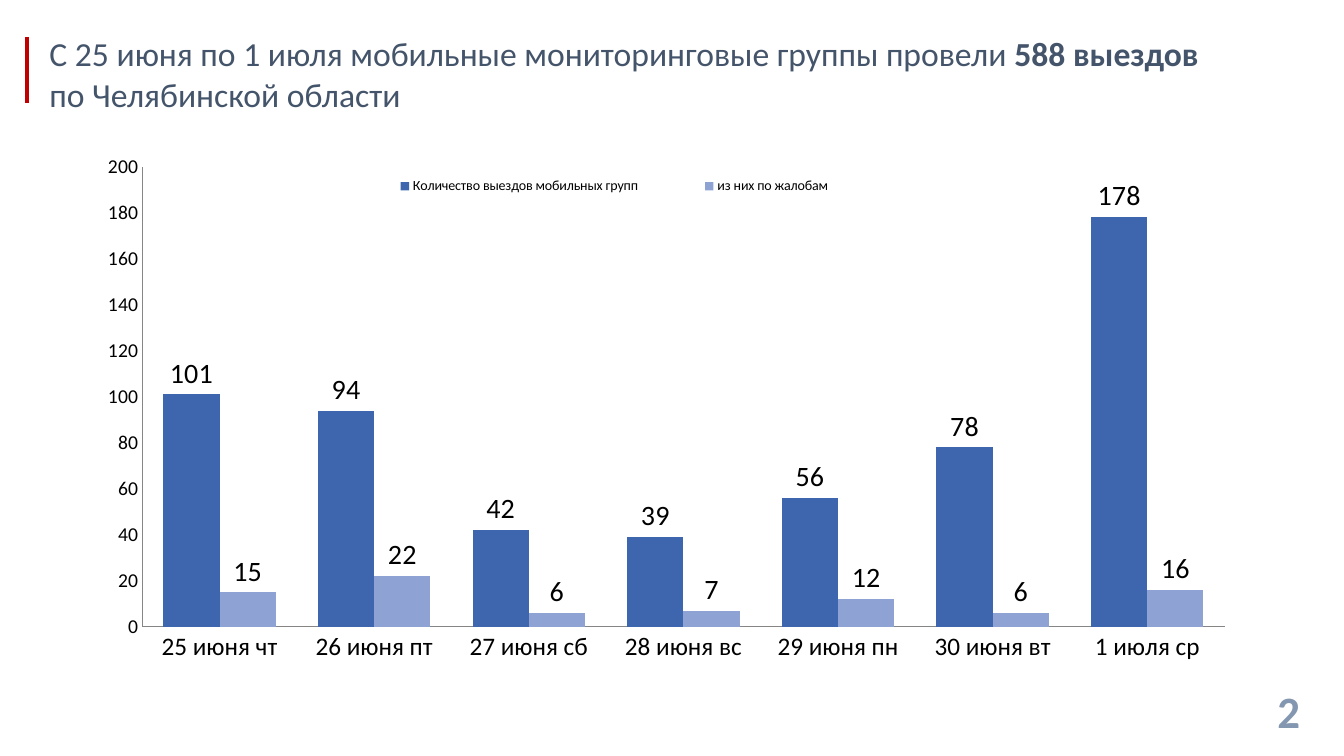
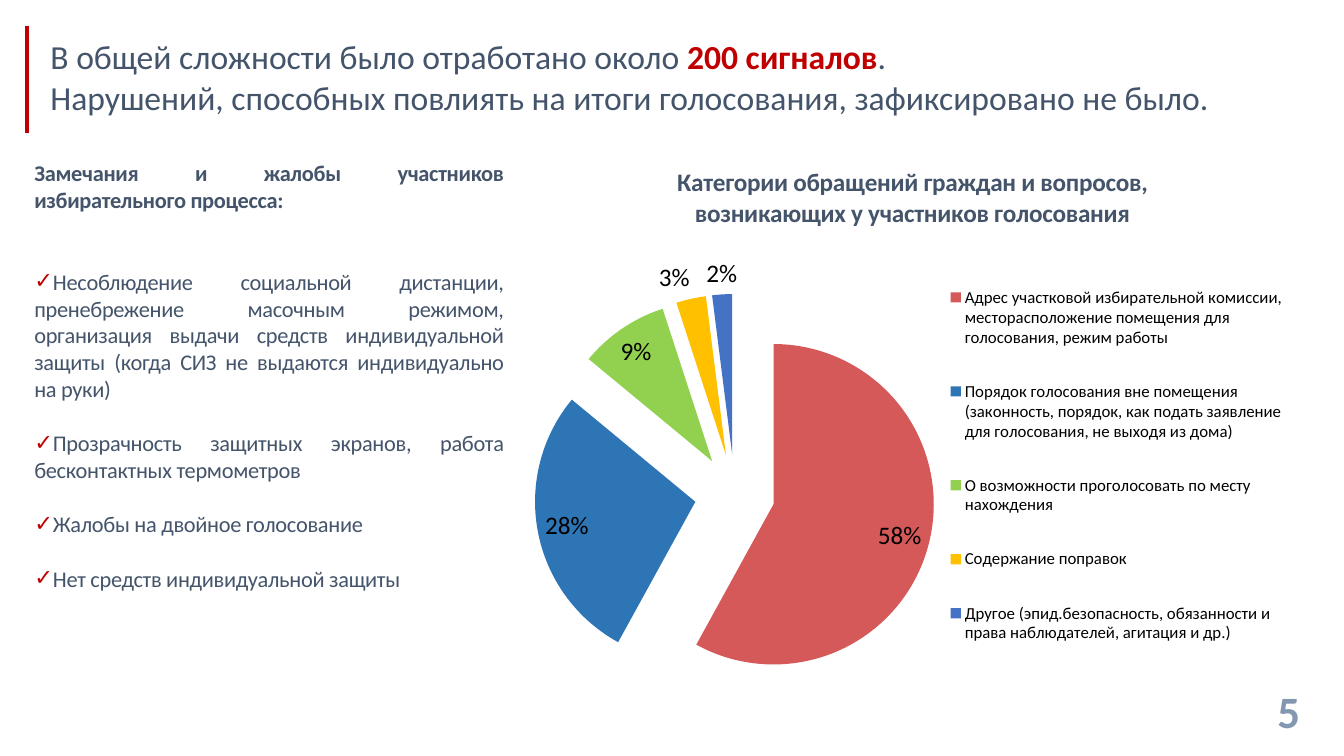
from dataclasses import dataclass

from pptx import Presentation
from pptx.chart.data import CategoryChartData
from pptx.dml.color import RGBColor
from pptx.enum import chart as ch, shapes, text
from pptx.oxml import parse_xml
from pptx.oxml.ns import nsdecls, qn
from pptx.util import Inches, Pt

FONT = "Calibri"
COLORS = {
    "slate": "44546A", "red": "C00000", "number": "8497B0", "black": "000000",
    "axis": "868686", "trips": "3D66AE", "complaints": "8FA2D4",
}
PIE_COLORS = ["D65959", "2E75B6", "92D050", "FFC000", "4472C4"]
TITLE_FORMAT = {"size": Pt(24), "bold": False, "color": "slate"}
NUMBER_FORMAT = {"size": Pt(32), "bold": True, "color": "number"}
BODY_FORMAT = {"size": Pt(16), "bold": False, "color": "slate"}


@dataclass
class Run:
    text: str
    bold: bool = False
    color: str = "slate"


@dataclass
class Box:
    left: float
    top: float
    width: float
    height: float

    def lengths(self) -> list:
        return [Inches(v) for v in (self.left, self.top, self.width, self.height)]


@dataclass
class Header:
    lines: list[list[Run]]
    box: Box
    bar_top: float
    bar_bottom: float
    number: str


def rgb(name: str) -> RGBColor:
    return RGBColor.from_string(COLORS.get(name, name))


def set_font(font, **values) -> None:
    for name, value in {"name": FONT, **values}.items():
        if name == "color":
            font.color.rgb = rgb(value)
        else:
            setattr(font, name, value)


def add_run(p, content: str, spacing: int = 0, **values) -> None:
    """Add a run; spacing is in hundredths of a point."""
    r = p.add_run()
    r.text = content
    set_font(r.font, **values)
    if spacing:
        r.font._element.set("spc", str(spacing))


def place(sp, box: Box, anchor) -> None:
    sp.left, sp.top, sp.width, sp.height = box.lengths()
    tf = sp.text_frame
    tf.word_wrap = True
    tf.auto_size = text.MSO_AUTO_SIZE.NONE
    tf.vertical_anchor = anchor


def format_paragraph(p, **values) -> None:
    defaults = {"alignment": text.PP_ALIGN.LEFT, "line_spacing": 1.0,
                "space_before": Pt(0), "space_after": Pt(0)}
    for name, value in {**defaults, **values}.items():
        setattr(p, name, value)


def paragraphs(tf, items: list):
    for i, item in enumerate(items):
        yield (tf.add_paragraph() if i else tf.paragraphs[0]), item


def add_header(slide, header: Header) -> None:
    """Add the red bar, the title and the page number."""
    bar = slide.shapes.add_connector(
        shapes.MSO_CONNECTOR.STRAIGHT, Inches(0.27), Inches(header.bar_top),
        Inches(0.27), Inches(header.bar_bottom))
    bar.line.color.rgb = rgb("red")
    bar.line.width = Pt(3)
    bar._element.spPr.append(parse_xml(f"<a:effectLst {nsdecls('a')}/>"))

    title = slide.shapes.title
    place(title, header.box, text.MSO_ANCHOR.TOP)
    for p, runs in paragraphs(title.text_frame, header.lines):
        format_paragraph(p)
        for run in runs:
            add_run(p, run.text, **{**TITLE_FORMAT, "bold": run.bold, "color": run.color})

    box = Box(12.67, 6.76, 0.49, 0.56)
    number = slide.shapes.add_textbox(*box.lengths())
    place(number, box, text.MSO_ANCHOR.TOP)
    tf = number.text_frame
    tf.margin_left = tf.margin_right = tf.margin_bottom = 0
    tf.margin_top = Inches(0.02)
    add_run(tf.paragraphs[0], header.number, 10, **NUMBER_FORMAT)


def add_remarks(body, heading: str, remarks: list[str]) -> None:
    place(body, Box(0.24, 1.52, 4.86, 4.41), text.MSO_ANCHOR.MIDDLE)
    line = 19.5
    for i, (p, content) in enumerate(paragraphs(body.text_frame, [heading, *remarks])):
        pPr = p._p.get_or_add_pPr()
        pPr.set("marL", "0")
        pPr.set("indent", "0")
        gap = {0: 0, 1: 2 * line}.get(i, line)
        format_paragraph(p, alignment=text.PP_ALIGN.JUSTIFY, space_before=Pt(gap))
        if i:
            bullet = (f'<a:buClr {nsdecls("a")}><a:srgbClr val="{COLORS["red"]}"/></a:buClr>',
                      f'<a:buFont {nsdecls("a")} typeface="{FONT}"/>',
                      f'<a:buChar {nsdecls("a")} char="✓"/>')
        else:
            bullet = (f"<a:buNone {nsdecls('a')}/>",)
        for xml in bullet:
            pPr.append(parse_xml(xml))
        add_run(p, content, -20, **{**BODY_FORMAT, "bold": i == 0})


def set_layout(parent, index: int, box: Box, inner: bool = False) -> None:
    """Fix a chart part at fractions of the chart area."""
    for old in parent.findall(qn("c:layout")):
        parent.remove(old)
    target = '<c:layoutTarget val="inner"/>' if inner else ""
    modes = "".join(f'<c:{k}Mode val="edge"/>' for k in "xy")
    values = zip("xywh", (box.left, box.top, box.width, box.height))
    sizes = "".join(f'<c:{k} val="{v}"/>' for k, v in values)
    parent.insert(index, parse_xml(
        f"<c:layout {nsdecls('c')}><c:manualLayout>{target}{modes}{sizes}"
        "</c:manualLayout></c:layout>"))


def add_chart(slide, kind, box: Box, categories: list[str], series: dict,
              plot_box: Box, legend_box: Box, legend_position, legend_size: int):
    data = CategoryChartData()
    data.categories = categories
    for name, values in series.items():
        data.add_series(name, values)
    chart = slide.shapes.add_chart(kind, *box.lengths(), data).chart
    set_font(chart.font, size=Pt(10), color="black")
    chart.has_title = False
    chart.has_legend = True
    chart.legend.position = legend_position
    chart.legend.include_in_layout = False
    set_font(chart.legend.font, size=Pt(legend_size), color="black")
    set_layout(chart.legend._element, 1, legend_box)
    set_layout(chart._chartSpace.find(".//" + qn("c:plotArea")), 0, plot_box, True)
    chart.plots[0].has_data_labels = True
    return chart


def add_trips_chart(slide) -> None:
    days = ["25 июня чт", "26 июня пт", "27 июня сб", "28 июня вс",
            "29 июня пн", "30 июня вт", "1 июля ср"]
    series = {
        "Количество выездов мобильных групп": [101, 94, 42, 39, 56, 78, 178],
        "из них по жалобам": [15, 22, 6, 7, 12, 6, 16],
    }
    chart = add_chart(
        slide, ch.XL_CHART_TYPE.COLUMN_CLUSTERED, Box(0.84, 1.43, 11.42, 5.57),
        days, series, Box(0.05, 0.04, 0.94, 0.82), Box(0.22, 0.05, 0.48, 0.05),
        ch.XL_LEGEND_POSITION.BOTTOM, 10)
    plot = chart.plots[0]
    plot.vary_by_categories = False
    plot.gap_width, plot.overlap = 75, 0
    for s, color in zip(plot.series, ("trips", "complaints")):
        s.format.fill.solid()
        s.format.fill.fore_color.rgb = rgb(color)
    labels = plot.data_labels
    labels.show_value = True
    labels.position = ch.XL_LABEL_POSITION.OUTSIDE_END
    set_font(labels.font, size=Pt(20), color="black")
    for axis, size in ((chart.category_axis, 18), (chart.value_axis, 14)):
        axis.has_major_gridlines = False
        axis.major_tick_mark = ch.XL_TICK_MARK.NONE
        axis.format.line.color.rgb = rgb("axis")
        set_font(axis.tick_labels.font, size=Pt(size), color="black")
    axis = chart.value_axis
    axis.minimum_scale, axis.maximum_scale, axis.major_unit = 0, 200, 20


def add_questions_chart(slide) -> None:
    name = "Категории обращений граждан и вопросов, возникающих у участников голосования"
    topics = [
        "Адрес участковой избирательной комиссии, месторасположение помещения "
        "для голосования, режим работы",
        "Порядок голосования вне помещения (законность, порядок, как подать "
        "заявление для голосования, не выходя из дома)",
        "О возможности проголосовать по месту нахождения",
        "Содержание поправок",
        "Другое (эпид.безопасность, обязанности и права наблюдателей, агитация и др.)",
    ]
    chart = add_chart(
        slide, ch.XL_CHART_TYPE.PIE, Box(5.3, 1.42, 7.5, 5.76), topics,
        {name: [58, 28, 9, 3, 2]}, Box(0, 0.26, 0.53, 0.69),
        Box(0.54, 0.19, 0.46, 0.73), ch.XL_LEGEND_POSITION.RIGHT, 12)
    chart.has_title = True
    add_run(chart.chart_title.text_frame.paragraphs[0], name, -20,
            size=Pt(18), bold=True, color="slate")
    plot = chart.plots[0]
    plot.vary_by_categories = True
    s = plot.series[0]
    for i, color in enumerate(PIE_COLORS):
        fill = s.points[i].format.fill
        fill.solid()
        fill.fore_color.rgb = rgb(color)
    s._element.find(qn("c:dPt")).addprevious(
        parse_xml(f'<c:explosion {nsdecls("c")} val="25"/>'))
    labels = plot.data_labels
    labels.show_value, labels.show_percentage = False, True
    labels.number_format, labels.number_format_is_linked = "0%", False
    labels.position = ch.XL_LABEL_POSITION.BEST_FIT
    set_font(labels.font, size=Pt(18), color="black")


def main() -> None:
    prs = Presentation()
    prs.slide_width, prs.slide_height = Inches(13.33), Inches(7.5)

    slide = prs.slides.add_slide(prs.slide_layouts[5])
    add_header(slide, Header(
        [[Run("С 25 июня по 1 июля мобильные мониторинговые группы провели "),
          Run("588 выездов", bold=True)],
         [Run("по Челябинской области")]],
        Box(0.39, 0.28, 12.51, 0.91), 0.37, 1.02, "2"))
    add_trips_chart(slide)

    slide = prs.slides.add_slide(prs.slide_layouts[1])
    add_header(slide, Header(
        [[Run("В общей сложности было отработано около "),
          Run("200 сигналов", bold=True, color="red"), Run(".")],
         [Run("Нарушений, способных повлиять на итоги голосования, "
              "зафиксировано не было.")]],
        Box(0.4, 0.31, 12.3, 0.91), 0.26, 1.32, "5"))
    add_remarks(slide.placeholders[1],
                "Замечания и жалобы участников избирательного процесса:", [
                    "Несоблюдение социальной дистанции, пренебрежение масочным режимом, "
                    "организация выдачи средств индивидуальной защиты "
                    "(когда СИЗ не выдаются индивидуально на руки)",
                    "Прозрачность защитных экранов, работа бесконтактных термометров",
                    "Жалобы на двойное голосование",
                    "Нет средств индивидуальной защиты",
                ])
    add_questions_chart(slide)
    prs.save("out.pptx")


if __name__ == "__main__":
    main()
